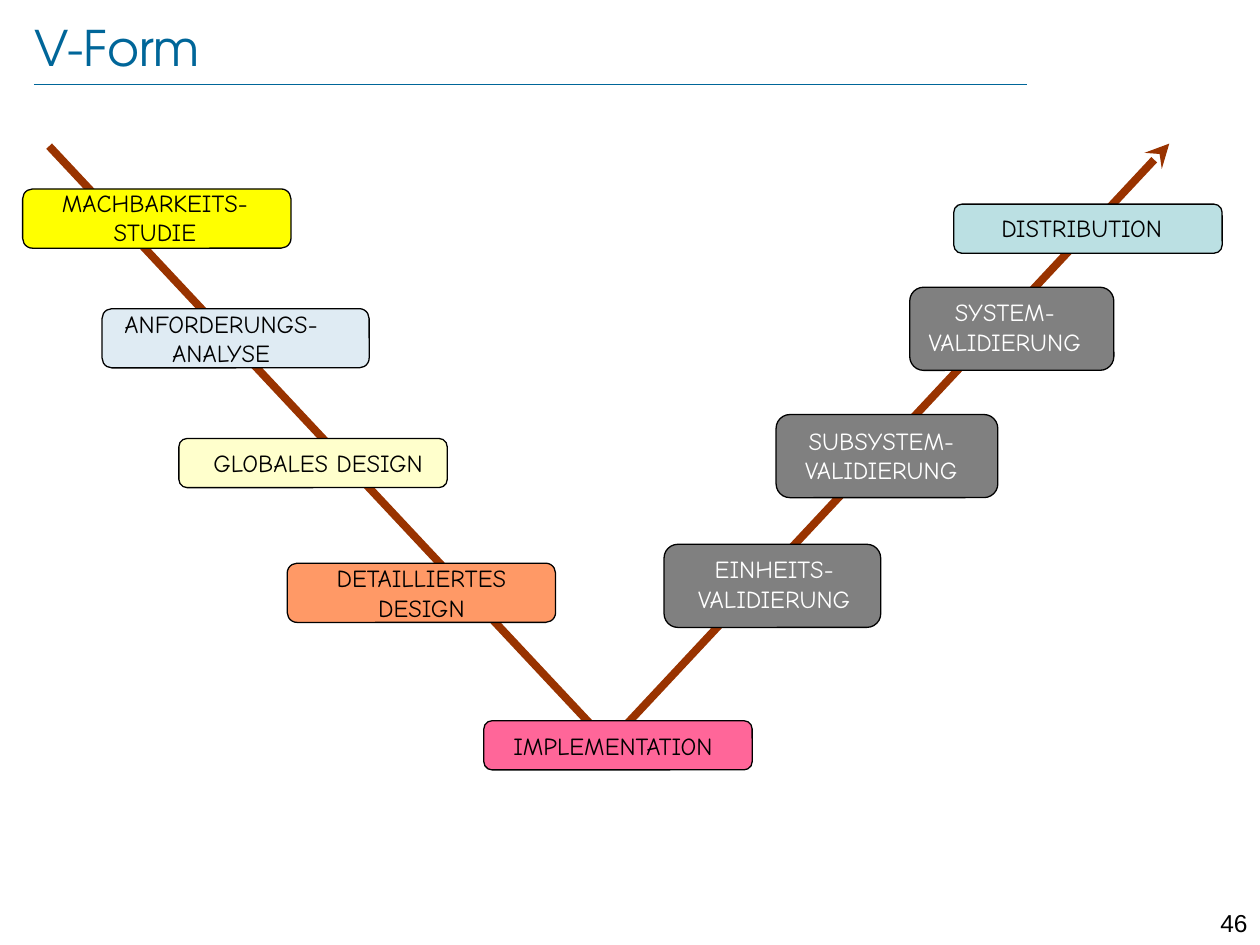
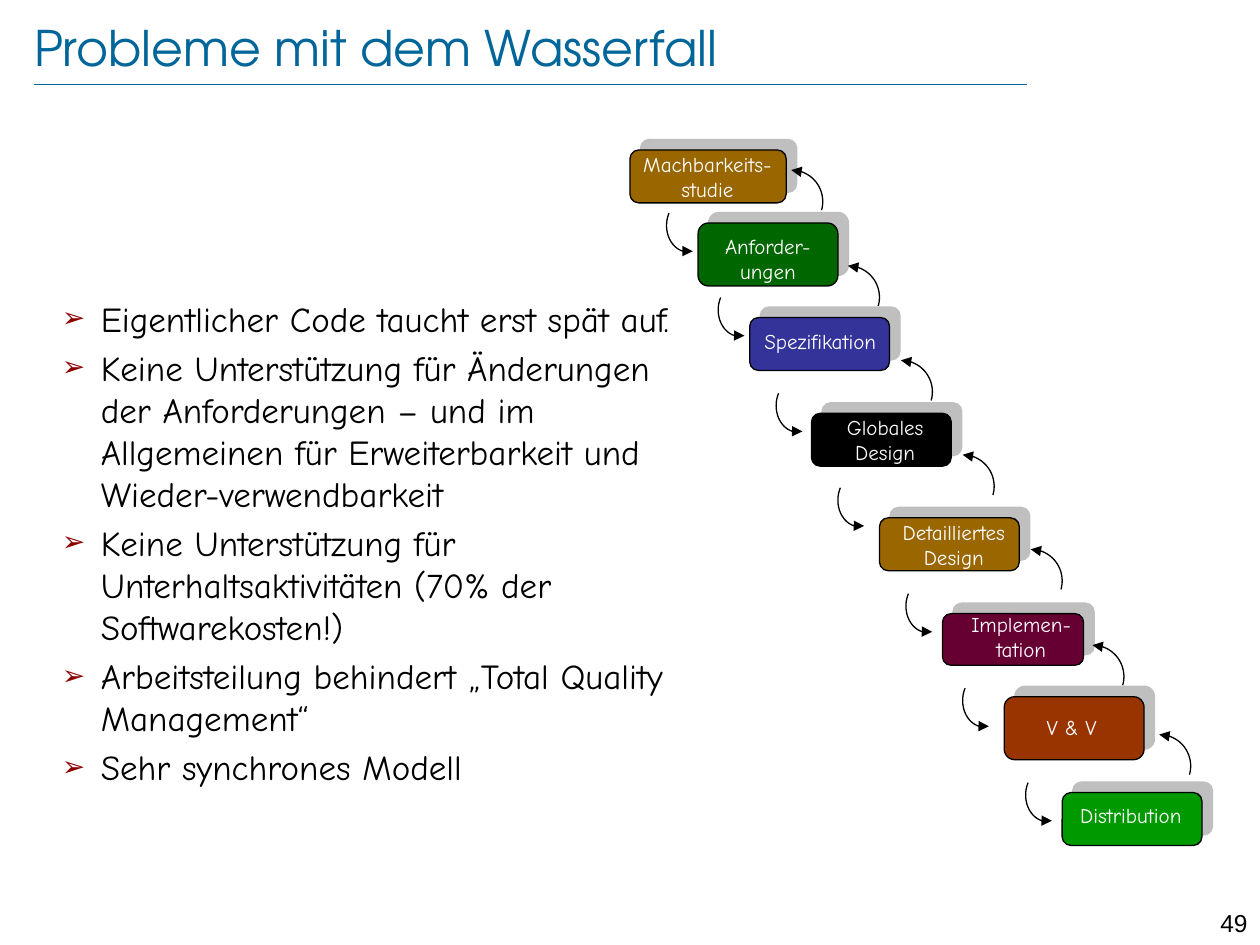
import math

from pptx import Presentation
from pptx.dml.color import RGBColor
from pptx.enum import shapes, text
from pptx.oxml import ns, xmlchemy
from pptx.util import Inches, Pt

TITLE_FONT, BODY_FONT, NUMBER_FONT = "TeX Gyre Adventor", "Comic Neue", "Arial"
BLUE, BLACK, WHITE = "006699", "000000", "FFFFFF"
BROWN, GREY, BULLET_RED = "993300", "808080", "8B0000"

# box, fill, label box, label, text colour
PHASES = [
    ((0.18, 1.5, 2.13, 0.47), "FFFF00", (0.18, 1.49, 2.1, 0.47), "MACHBARKEITS-STUDIE", BLACK),
    ((0.81, 2.45, 2.12, 0.47), "DFEBF3", (0.81, 2.45, 1.89, 0.47), "ANFORDERUNGS-ANALYSE", BLACK),
    ((1.42, 3.48, 2.13, 0.39), "FFFFCC", (1.58, 3.56, 1.89, 0.24), "GLOBALES DESIGN", BLACK),
    ((2.28, 4.47, 2.13, 0.47), "FF9966", (2.4, 4.47, 1.89, 0.47), "DETAILLIERTES DESIGN", BLACK),
    ((7.57, 1.62, 2.13, 0.39), "BBE0E3", (7.64, 1.69, 1.89, 0.24), "DISTRIBUTION", BLACK),
    ((3.84, 5.72, 2.13, 0.39), "FF6699", (3.92, 5.8, 1.89, 0.24), "IMPLEMENTATION", BLACK),
    ((5.27, 4.32, 1.72, 0.66), GREY, (5.2, 4.4, 1.89, 0.47), "EINHEITS-\nVALIDIERUNG", WHITE),
    ((6.16, 3.29, 1.76, 0.66), GREY, (6.05, 3.38, 1.89, 0.47), "SUBSYSTEM-\nVALIDIERUNG", WHITE),
    ((7.22, 2.28, 1.62, 0.66), GREY, (7.03, 2.36, 1.89, 0.47), "SYSTEM-\nVALIDIERUNG", WHITE),
]

# box, fill, label box, label, centre of the arc down to it, centre of the arc back up
STEPS = [
    ((5, 1.19, 1.24, 0.42), "996600", (5, 1.2, 1.23, 0.4), "Machbarkeits-studie", None, None),
    ((5.54, 1.77, 1.11, 0.5), "006600", (5.56, 1.85, 1.07, 0.4), "Anforder-ungen",
     (5.46, 1.79), (6.28, 1.6)),
    ((5.95, 2.52, 1.11, 0.42), "333399", (5.99, 2.61, 1.04, 0.2), "Spezifikation",
     (5.87, 2.46), (6.73, 2.36)),
    ((6.44, 3.28, 1.11, 0.42), BLACK, (6.53, 3.29, 0.99, 0.4), "Globales Design",
     (6.33, 3.22), (7.15, 3.11)),
    ((6.98, 4.11, 1.11, 0.42), "996600", (7.05, 4.12, 1.04, 0.4), "Detailliertes Design",
     (6.82, 3.97), (7.64, 3.86)),
    ((7.48, 4.87, 1.12, 0.41), "660033", (7.49, 4.85, 1.23, 0.4), "Implemen-\ntation",
     (7.36, 4.81), (8.18, 4.61)),
    ((7.97, 5.53, 1.11, 0.5), BROWN, (8.01, 5.67, 0.99, 0.2), "V & V",
     (7.81, 5.56), (8.67, 5.37)),
    ((8.43, 6.29, 1.11, 0.42), "009900", (8.32, 6.37, 1.31, 0.2), "Distribution",
     (8.31, 6.31), (9.2, 6.08)),
]

PROBLEMS = [
    "Eigentlicher Code taucht erst spät auf.",
    "Keine Unterstützung für Änderungen der Anforderungen – und im Allgemeinen "
    "für Erweiterbarkeit und Wieder-verwendbarkeit",
    "Keine Unterstützung für Unterhaltsaktivitäten (70% der Softwarekosten!)",
    "Arbeitsteilung behindert „Total Quality Management“",
    "Sehr synchrones Modell",
]


def rgb(hex_color):
    return RGBColor.from_string(hex_color)


def inches(lengths):
    return [Inches(length) for length in lengths]


def add_xml(parent, tag, **attributes):
    child = xmlchemy.OxmlElement(tag)
    for name, value in attributes.items():
        child.set(name, str(value))
    parent.append(child)
    return child


def add_span(para, words, font, size, color):
    span = para.add_run()
    span.text = words
    span.font.name = font
    span.font.size = Pt(size)
    span.font.color.rgb = rgb(color)


def clear_margins(frame):
    frame.margin_left = frame.margin_top = frame.margin_right = frame.margin_bottom = 0


def place(shape, box):
    shape.left, shape.top, shape.width, shape.height = inches(box)


def set_line(shape, color, width, arrowhead=None):
    shape.line.color.rgb = rgb(color)
    shape.line.width = Pt(width)
    if arrowhead:
        add_xml(shape.element.spPr.find(ns.qn("a:ln")), "a:tailEnd", type=arrowhead)


def add_line(page, start, end, color, width, arrowhead=None):
    line = page.shapes.add_connector(shapes.MSO_CONNECTOR.STRAIGHT, *inches(start + end))
    set_line(line, color, width, arrowhead)
    add_xml(line.element.spPr, "a:effectLst")


def add_rounded_box(page, box, fill, shadow=False):
    shape = page.shapes.add_shape(shapes.MSO_SHAPE.ROUNDED_RECTANGLE, *inches(box))
    shape.fill.solid()
    shape.fill.fore_color.rgb = rgb(fill)
    set_line(shape, BLACK, 0.75)
    shape.shadow.inherit = False
    if shadow:
        effects = shape.element.spPr.find(ns.qn("a:effectLst"))
        outer = add_xml(effects, "a:outerShdw", blurRad=0, dist=Pt(8.5), dir=315 * 60000,
                        algn="ctr", rotWithShape=0)
        add_xml(add_xml(outer, "a:srgbClr", val=GREY), "a:alpha", val=50000)


def add_label(page, box, words, size, color):
    frame = page.shapes.add_textbox(*inches(box)).text_frame
    frame.word_wrap = True
    frame.auto_size = text.MSO_AUTO_SIZE.SHAPE_TO_FIT_TEXT
    clear_margins(frame)
    para = frame.paragraphs[0]
    para.alignment = text.PP_ALIGN.CENTER
    for index, row in enumerate(words.split("\n")):
        if index:
            para.add_line_break()
        add_span(para, row, BODY_FONT, size, color)


def add_arc_arrow(page, centre, radii, start, end, segments=24):
    """Draw an open elliptic arc between two angles in degrees, pointing at its end."""
    points = []
    for step in range(segments + 1):
        angle = math.radians(start + (end - start) * step / segments)
        points.append(inches((centre[0] + radii[0] * math.cos(angle),
                              centre[1] + radii[1] * math.sin(angle))))
    builder = page.shapes.build_freeform(*points[0])
    builder.add_line_segments(points[1:], close=False)
    arc = builder.convert_to_shape()
    arc.fill.background()
    set_line(arc, BLACK, 0.75, "triangle")
    arc.shadow.inherit = False


def add_page(deck, layout, title, title_width, number):
    """Add a slide with the shared title, rule and page number."""
    page = deck.slides.add_slide(deck.slide_layouts.get_by_name(layout))
    place(page.shapes.title, (0.27, 0.13, title_width, 0.48))
    frame = page.shapes.title.text_frame
    frame.auto_size = text.MSO_AUTO_SIZE.NONE
    frame.vertical_anchor = text.MSO_ANCHOR.MIDDLE
    clear_margins(frame)
    frame.paragraphs[0].alignment = text.PP_ALIGN.LEFT
    add_span(frame.paragraphs[0], title, TITLE_FONT, 28, BLUE)
    add_line(page, (0.27, 0.67), (8.15, 0.67), BLUE, 0.25)
    frame = page.shapes.add_textbox(*inches((9.45, 7.16, 0.55, 0.24))).text_frame
    frame.word_wrap = True
    frame.paragraphs[0].alignment = text.PP_ALIGN.RIGHT
    add_span(frame.paragraphs[0], number, NUMBER_FONT, 14, BLACK)
    return page


def fill_bullets(body, box, items):
    place(body, box)
    frame = body.text_frame
    frame.auto_size = text.MSO_AUTO_SIZE.NONE
    frame.margin_top = Inches(0.1)
    for index, item in enumerate(items):
        para = frame.add_paragraph() if index else frame.paragraphs[0]
        para.level = 1
        para.space_before = Pt(4 if index else 0)
        props = para._p.get_or_add_pPr()
        props.set("marL", str(Inches(0.43)))
        props.set("indent", str(Inches(-0.31)))
        add_xml(add_xml(props, "a:buClr"), "a:srgbClr", val=BULLET_RED)
        add_xml(props, "a:buSzPct", val=80000)
        add_xml(props, "a:buFont", typeface=NUMBER_FONT)
        add_xml(props, "a:buChar", char="➢")
        add_span(para, item, BODY_FONT, 20, BLACK)


def add_v_model(page):
    add_line(page, (0.39, 1.16), (4.82, 5.89), BROWN, 4.5)
    add_line(page, (4.85, 5.88), (9.28, 1.14), BROWN, 4.5, "stealth")
    for box, fill, label_box, label, color in PHASES:
        add_rounded_box(page, box, fill)
        add_label(page, label_box, label, 14, color)


def add_waterfall(page):
    for box, fill, label_box, label, down, up in STEPS:
        add_rounded_box(page, box, fill, shadow=True)
        add_label(page, label_box, label, 12, WHITE)
        if down:
            add_arc_arrow(page, down, (0.17, 0.21), 208, 77)
            add_arc_arrow(page, up, (0.25, 0.25), 16, -90)


def main():
    deck = Presentation()
    deck.slide_width, deck.slide_height = Inches(10), Inches(7.5)
    add_v_model(add_page(deck, "Title Only", "V-Form", 8.43, "46"))
    page = add_page(deck, "Title and Content", "Probleme mit dem Wasserfall", 8.69, "49")
    fill_bullets(page.placeholders[1], (0.27, 2.26, 5.23, 4.63), PROBLEMS)
    add_waterfall(page)
    deck.save("out.pptx")


if __name__ == "__main__":
    main()
